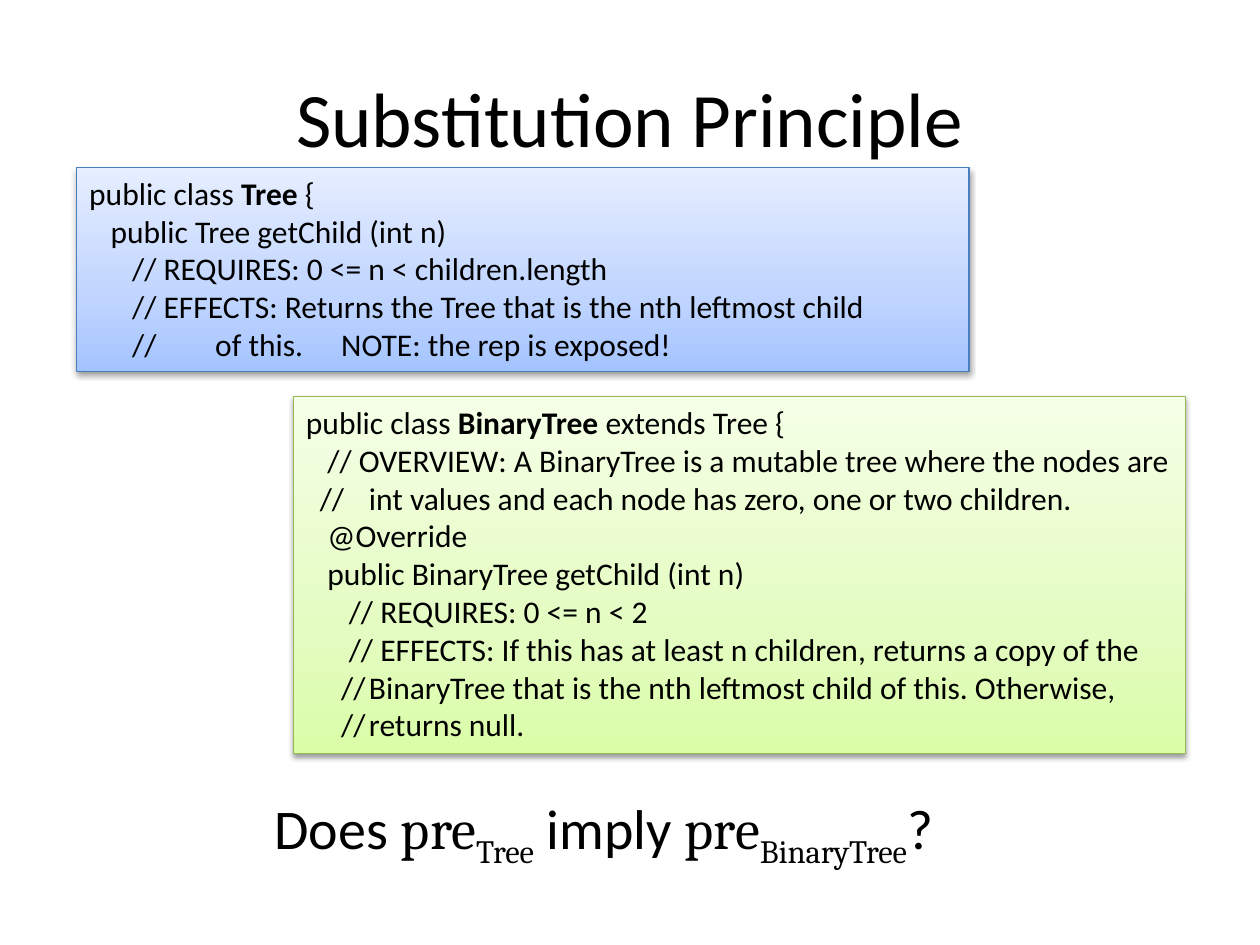
"""Build the Substitution Principle slide with two class listings and a question."""
import copy

import pptx
import pptx.dml.color
import pptx.enum.shapes
import pptx.enum.text
import pptx.oxml
import pptx.oxml.ns
import pptx.util
from pptx.util import Inches

RGBColor = pptx.dml.color.RGBColor
BLACK = RGBColor(0x00, 0x00, 0x00)
BLUE_LINE = RGBColor(0x4B, 0x7E, 0xBC)
BLUE_STOPS = [(0, RGBColor(0xA4, 0xC4, 0xFF)), (0.35, RGBColor(0xBF, 0xD4, 0xFF)),
              (1, RGBColor(0xE6, 0xEE, 0xFF))]
GREEN_LINE = RGBColor(0x98, 0xB9, 0x55)
GREEN_STOPS = [(0, RGBColor(0xDA, 0xFD, 0xA7)), (0.35, RGBColor(0xE4, 0xFC, 0xC2)),
               (1, RGBColor(0xF5, 0xFF, 0xE7))]
BODY_FONT = "Calibri"
MATH_FONT = "Cambria"
MEMBER, COMMENT = 0.17, 0.34

TREE_LINES = [
    (0, [], ["public class ", "Tree", " {"]),
    (MEMBER, [], ["public Tree getChild (int n)"]),
    (COMMENT, [], ["// REQUIRES: 0 <= n < children.length"]),
    (COMMENT, [], ["// EFFECTS: Returns the Tree that is the nth leftmost child"]),
    (COMMENT, [1.83, 2.7], ["//\tof this.\tNOTE: the rep is exposed!"]),
]
BINARY_TREE_LINES = [
    (0, [], ["public class ", "BinaryTree", " extends Tree {"]),
    (MEMBER, [], ["// OVERVIEW: A BinaryTree is a mutable tree where the nodes are"]),
    (0.11, [0.58], ["//\tint values and each node has zero, one or two children."]),
    (MEMBER, [], ["@Override"]),
    (MEMBER, [], ["public BinaryTree getChild (int n)"]),
    (COMMENT, [], ["// REQUIRES: 0 <= n < 2"]),
    (COMMENT, [], ["// EFFECTS: If this has at least n children, returns a copy of the"]),
    (0.28, [0.81], ["//\tBinaryTree that is the nth leftmost child of this. Otherwise,"]),
    (0.28, [0.81], ["//\treturns null."]),
]
QUESTION = [("Does ", BODY_FONT, 0), ("pre", MATH_FONT, 0), ("Tree", MATH_FONT, -25),
            (" imply ", BODY_FONT, 0), ("pre", MATH_FONT, 0),
            ("BinaryTree", MATH_FONT, -25), ("?", BODY_FONT, 0)]


def style_font(font, size):
    """Set the shared face and colour at the given point size."""
    font.name = BODY_FONT
    font.size = pptx.util.Pt(size)
    font.color.rgb = BLACK


def set_gradient(fill, stops):
    """Fill upwards through the given positions and colours."""
    fill.gradient()
    fill.gradient_angle = 90
    stop_list = fill._xPr.find(".//" + pptx.oxml.ns.qn("a:gsLst"))
    stop_list.append(copy.deepcopy(stop_list[0]))
    for stop, (position, color) in zip(fill.gradient_stops, stops):
        stop.position = position
        stop.color.rgb = color


def add_shadow(box):
    """Give the box a soft shadow that falls straight down."""
    box.shadow.inherit = False
    effects = box._element.spPr.find(pptx.oxml.ns.qn("a:effectLst"))
    effects.append(pptx.oxml.parse_xml(
        f'<a:outerShdw {pptx.oxml.ns.nsdecls("a")} blurRad="40000" dist="20000" '
        'dir="5400000" rotWithShape="0"><a:srgbClr val="000000">'
        '<a:alpha val="38000"/></a:srgbClr></a:outerShdw>'))


def indent_line(para, indent, tabs):
    """Set the first-line indent and tab stops, in inches."""
    properties = para._p.get_or_add_pPr()
    properties.set("marL", "0")
    properties.set("indent", str(Inches(indent)))
    if tabs:
        stops = "".join(f'<a:tab pos="{Inches(tab)}" algn="l"/>' for tab in tabs)
        properties.append(pptx.oxml.parse_xml(
            f'<a:tabLst {pptx.oxml.ns.nsdecls("a")}>{stops}</a:tabLst>'))


def add_code_box(page, left, top, height, stops, line_color, lines):
    """Add a shaded listing whose class name is bold."""
    box = page.shapes.add_shape(pptx.enum.shapes.MSO_SHAPE.RECTANGLE, Inches(left),
                                Inches(top), Inches(7.08), Inches(height))
    set_gradient(box.fill, stops)
    box.line.color.rgb = line_color
    box.line.width = pptx.util.Pt(0.75)
    add_shadow(box)
    frame = box.text_frame
    frame.word_wrap = True
    frame.vertical_anchor = pptx.enum.text.MSO_ANCHOR.TOP
    for number, (indent, tabs, spans) in enumerate(lines):
        para = frame.add_paragraph() if number else frame.paragraphs[0]
        para.alignment = pptx.enum.text.PP_ALIGN.LEFT
        indent_line(para, indent, tabs)
        style_font(para.font, 18)
        for position, text in enumerate(spans):
            span = para.add_run()
            span.text = text
            if position == 1:
                span.font.bold = True


def add_title(page, text):
    """Add the centred slide title."""
    box = page.shapes.add_textbox(Inches(0.5), Inches(0.3), Inches(9), Inches(1.25))
    frame = box.text_frame
    frame.word_wrap = True
    frame.vertical_anchor = pptx.enum.text.MSO_ANCHOR.MIDDLE
    para = frame.paragraphs[0]
    para.text = text
    para.alignment = pptx.enum.text.PP_ALIGN.CENTER
    style_font(para.font, 44)


def add_question(page, spans):
    """Add the closing question with its subscripts."""
    box = page.shapes.add_textbox(Inches(2.08), Inches(6.25), Inches(5.97), Inches(0.64))
    box.text_frame.word_wrap = False
    para = box.text_frame.paragraphs[0]
    style_font(para.font, 32)
    for text, face, baseline in spans:
        span = para.add_run()
        span.text = text
        span.font.name = face
        if baseline:
            span._r.get_or_add_rPr().set("baseline", str(baseline * 1000))


def main():
    """Build and save the slide."""
    deck = pptx.Presentation()
    deck.slide_width, deck.slide_height = Inches(10), Inches(7.5)
    page = deck.slides.add_slide(deck.slide_layouts[6])
    add_title(page, "Substitution Principle")
    add_code_box(page, 0.61, 1.33, 1.62, BLUE_STOPS, BLUE_LINE, TREE_LINES)
    add_code_box(page, 2.33, 3.15, 2.83, GREEN_STOPS, GREEN_LINE, BINARY_TREE_LINES)
    add_question(page, QUESTION)
    deck.save("out.pptx")


if __name__ == "__main__":
    main()
